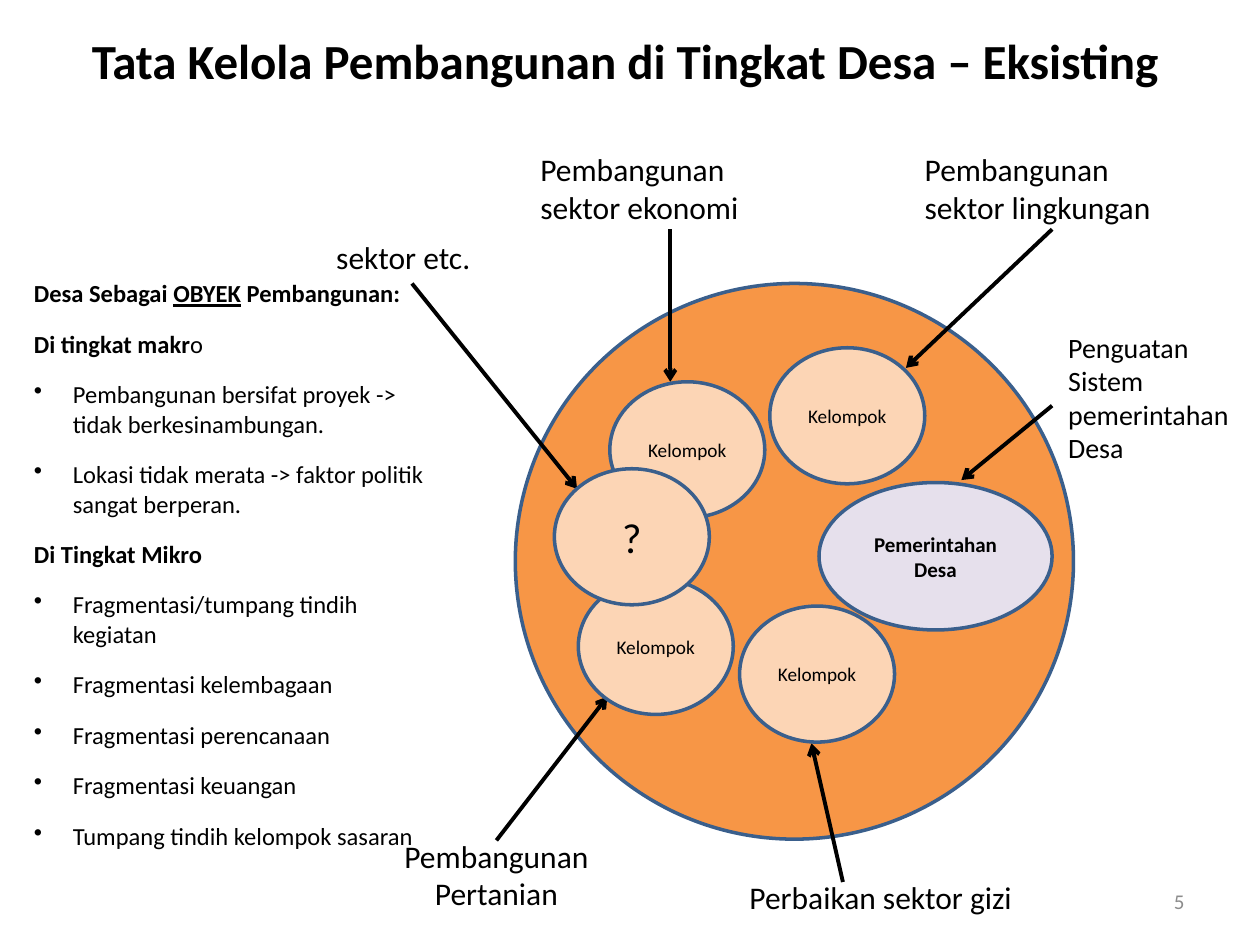
"""Builds a slide on how village development is currently governed."""
import pptx
import pptx.dml.color
import pptx.enum.shapes
import pptx.enum.text
import pptx.oxml.ns
import pptx.util
from lxml import etree

COLORS = {"ink": "000000", "edge": "3A5F8C", "village": "F79646",
          "group": "FCD5B5", "office": "E6E0EC", "number": "8C8C8C"}
COLS, ROWS = 100, 75
WIDTH, HEIGHT = pptx.util.Inches(10), pptx.util.Inches(7.5)
ALIGN = pptx.enum.text.PP_ALIGN
ANCHOR = pptx.enum.text.MSO_ANCHOR

TITLE = ("Tata Kelola Pembangunan di Tingkat Desa – Eksisting", (2.5, 1.9, 94.2, 5.7))
NUMBER = ("5", (71.7, 69.5, 23.3, 4))
VILLAGE = (40.9, 22.5, 44.3, 44.1)
OFFICE = ("Pemerintahan Desa", (65, 38.3, 18.5, 11.7))
GROUP = (12.3, 10.8)
GROUPS = [
    ("Kelompok", 61.1, 27.6, 11),
    ("Kelompok", 48.4, 30.3, 11),
    ("Kelompok", 58.7, 48.1, 11),
    ("Kelompok", 45.9, 45.9, 11),
    ("?", 44, 37.2, 24),
]
SECTORS = [
    ("Pembangunan sektor ekonomi", (41.9, 11.4, 20, 7.1), 18, ALIGN.LEFT,
     (53.2, 18.2, 53.2, 30.3)),
    ("Pembangunan sektor lingkungan", (72.4, 11.4, 21.9, 7.1), 18, ALIGN.LEFT,
     (83.5, 18.2, 71.9, 29.2)),
    ("Pembangunan Pertanian", (27.7, 65.9, 23.4, 7.1), 18, ALIGN.CENTER,
     (39.4, 66.7, 48.2, 55.3)),
    ("Perbaikan sektor gizi", (58.5, 69.2, 29.3, 4), 18, ALIGN.LEFT,
     (66.9, 70, 64.4, 59)),
    ("sektor etc.", (25.7, 18.4, 13.9, 4), 18, ALIGN.LEFT,
     (32.7, 22.5, 45.8, 38.8)),
    ("Penguatan Sistem pemerintahan Desa", (83.8, 25.7, 17, 11.8), 16, ALIGN.LEFT,
     (83.5, 32.2, 76.3, 38.1)),
]
NOTES = (1.7, 21.6, 33.2, 46.8)
BOLD, LINED, PLAIN = {"bold": True}, {"bold": True, "underline": True}, {}
POINTS = [
    (False, [("Desa Sebagai ", BOLD), ("OBYEK", LINED), (" Pembangunan:", BOLD)]),
    (False, [("Di tingkat makr", BOLD), ("o", PLAIN)]),
    (True, [("Pembangunan bersifat proyek -> tidak berkesinambungan.", PLAIN)]),
    (True, [("Lokasi tidak merata -> faktor politik sangat berperan.", PLAIN)]),
    (False, [("Di Tingkat Mikro", BOLD)]),
    (True, [("Fragmentasi/tumpang tindih kegiatan", PLAIN)]),
    (True, [("Fragmentasi kelembagaan", PLAIN)]),
    (True, [("Fragmentasi perencanaan", PLAIN)]),
    (True, [("Fragmentasi keuangan", PLAIN)]),
    (True, [("Tumpang tindih kelompok sasaran", PLAIN)]),
]


def color(name):
    return pptx.dml.color.RGBColor.from_string(COLORS[name])


def place(spots):
    """Turns alternating columns and rows into slide lengths."""
    units = (WIDTH / COLS, HEIGHT / ROWS)
    return [round(spot * units[i % 2]) for i, spot in enumerate(spots)]


def style(target, values):
    for name, value in values.items():
        setattr(target, name, value)


def write(par, text, size, ink="ink", **look):
    run = par.add_run()
    run.text = text
    style(run.font, {"name": "Calibri", "size": pptx.util.Pt(size), **look})
    run.font.color.rgb = color(ink)


def label(slide, text, box, size, align, ink="ink", anchor=ANCHOR.TOP, **look):
    frame = slide.shapes.add_textbox(*place(box)).text_frame
    style(frame, {"word_wrap": True, "vertical_anchor": anchor})
    par = frame.paragraphs[0]
    par.alignment = align
    write(par, text, size, ink, **look)


def oval(slide, box, fill, text="", size=11, **look):
    shape = slide.shapes.add_shape(pptx.enum.shapes.MSO_SHAPE.OVAL, *place(box))
    shape.shadow.inherit = False
    shape.fill.solid()
    shape.fill.fore_color.rgb = color(fill)
    shape.line.color.rgb = color("edge")
    shape.line.width = pptx.util.Pt(2)
    if text:
        style(shape.text_frame, {"word_wrap": True, "vertical_anchor": ANCHOR.MIDDLE})
        par = shape.text_frame.paragraphs[0]
        par.alignment = ALIGN.CENTER
        write(par, text, size, **look)


def arrow(slide, ends):
    link = slide.shapes.add_connector(
        pptx.enum.shapes.MSO_CONNECTOR.STRAIGHT, *place(ends))
    link.line.color.rgb = color("ink")
    link.line.width = pptx.util.Pt(2.25)
    qn = pptx.oxml.ns.qn
    etree.SubElement(link.line._get_or_add_ln(), qn("a:tailEnd"), type="arrow")
    etree.SubElement(link._element.spPr, qn("a:effectLst"))


def notes(slide):
    frame = slide.shapes.add_textbox(*place(NOTES)).text_frame
    frame.word_wrap = True
    gap, dent = pptx.util.Pt(6), pptx.util.Inches(0.31)
    for i, (dot, runs) in enumerate(POINTS):
        par = frame.add_paragraph() if i else frame.paragraphs[0]
        style(par, {"space_before": gap, "space_after": gap})
        if dot:
            props = par._p.get_or_add_pPr()
            props.set("marL", str(dent))
            props.set("indent", str(-dent))
            etree.SubElement(props, pptx.oxml.ns.qn("a:buChar"), char="•")
        for text, look in runs:
            write(par, text, 14, **look)


def main():
    deck = pptx.Presentation()
    style(deck, {"slide_width": WIDTH, "slide_height": HEIGHT})
    slide = deck.slides.add_slide(deck.slide_layouts[6])
    oval(slide, VILLAGE, "village")
    for text, box, size, align, ends in SECTORS:
        arrow(slide, ends)
        label(slide, text, box, size, align)
    label(slide, *TITLE, 28, ALIGN.CENTER, bold=True)
    notes(slide)
    text, box = OFFICE
    oval(slide, box, "office", text, 12, bold=True)
    for text, left, top, size in GROUPS:
        oval(slide, (left, top, *GROUP), "group", text, size)
    label(slide, *NUMBER, 12, ALIGN.RIGHT, "number", ANCHOR.MIDDLE)
    deck.save("out.pptx")


if __name__ == "__main__":
    main()
